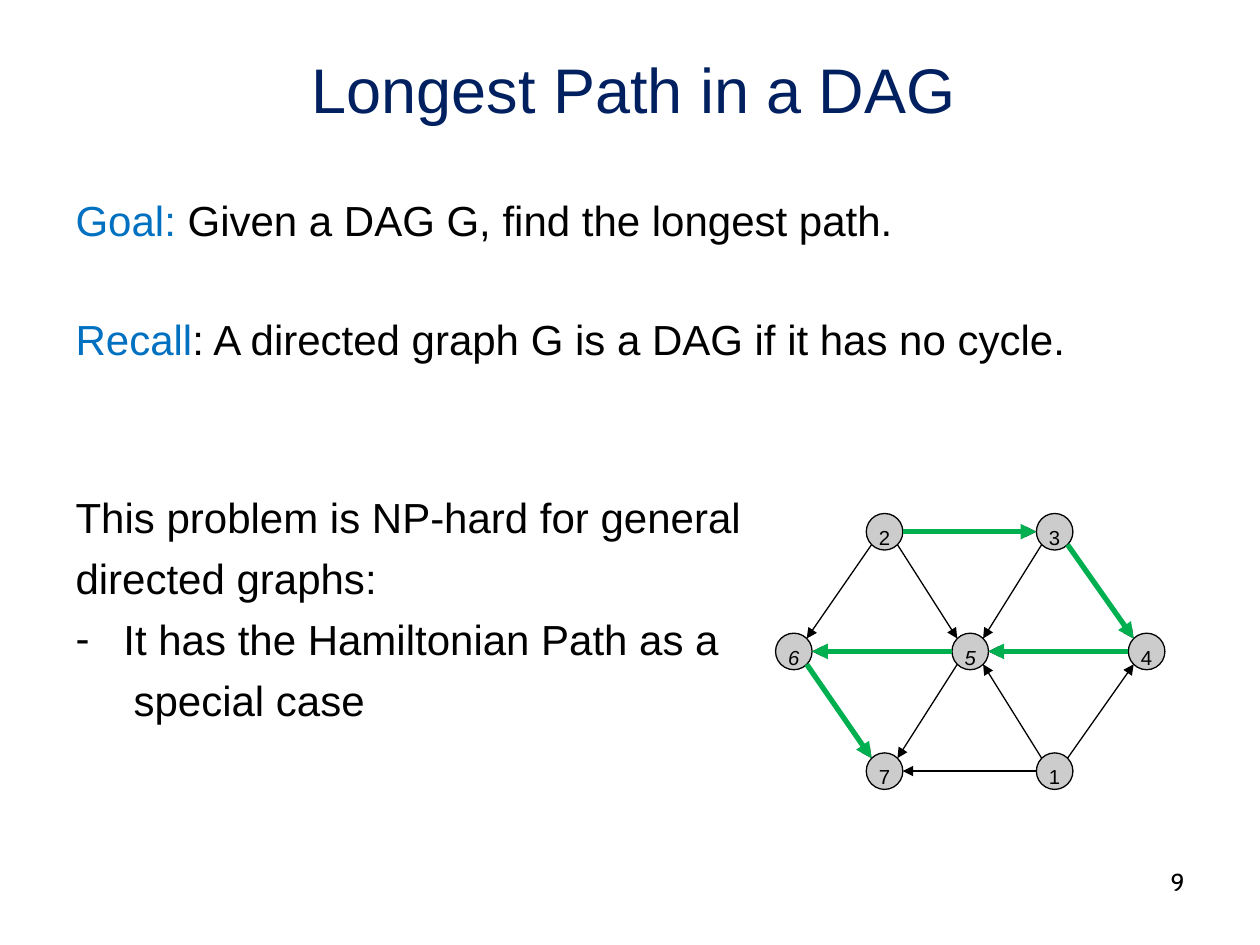
from dataclasses import dataclass
from math import sqrt

from lxml.etree import SubElement
from pptx import Presentation
from pptx.dml.color import RGBColor
from pptx.enum.shapes import MSO_CONNECTOR, MSO_SHAPE
from pptx.enum.text import MSO_ANCHOR, MSO_AUTO_SIZE, PP_ALIGN
from pptx.oxml.ns import qn
from pptx.util import Inches, Pt


@dataclass(frozen=True)
class Theme:
    font: str = "Arial"
    number_font: str = "Cabin"
    title_color: str = "002060"
    accent: str = "0070C0"
    ink: str = "000000"
    node_fill: str = "CCCCCC"
    highlight: str = "00B050"
    title_size: int = 36
    body_size: int = 24
    node_size: int = 20
    number_size: int = 14
    thin: float = 0.75
    thick: float = 3


class SlideBuilder:
    def __init__(self, slide, theme):
        self.slide = slide
        self.theme = theme

    def run(self, p, text, size, color, font=None):
        r = p.add_run()
        r.text = text
        r.font.name = font or self.theme.font
        r.font.size = Pt(size)
        r.font.color.rgb = RGBColor.from_string(color)
        return r

    def place(self, sp, left, top, width, height):
        sp.left, sp.top = Inches(left), Inches(top)
        sp.width, sp.height = Inches(width), Inches(height)

    def frame(self, sp, top_inset):
        tf = sp.text_frame
        tf.word_wrap = True
        tf.auto_size = MSO_AUTO_SIZE.NONE
        tf.vertical_anchor = MSO_ANCHOR.TOP
        tf.margin_top = Inches(top_inset)
        return tf

    def title(self, text, box):
        sp = self.slide.shapes.title
        self.place(sp, *box)
        p = self.frame(sp, 0.1).paragraphs[0]
        p.alignment = PP_ALIGN.CENTER
        self.run(p, text, self.theme.title_size, self.theme.title_color)

    def body(self, paragraphs, box):
        sp = self.slide.placeholders[1]
        self.place(sp, *box)
        tf = self.frame(sp, 0.09)
        for i, (space, margin, bullet, runs) in enumerate(paragraphs):
            p = tf.paragraphs[0] if i == 0 else tf.add_paragraph()
            p.space_before = Pt(space)
            pPr = p._p.get_or_add_pPr()
            pPr.set("marL", str(Inches(margin)))
            pPr.set("indent", str(Inches(-margin if bullet else 0)))
            if bullet:
                SubElement(pPr, qn("a:buChar")).set("char", bullet)
            else:
                SubElement(pPr, qn("a:buNone"))
            for text, color in runs:
                self.run(p, text, self.theme.body_size, color)

    def page_number(self, text, box):
        sp = self.slide.shapes.add_textbox(*map(Inches, box))
        p = self.frame(sp, 0.05).paragraphs[0]
        p.alignment = PP_ALIGN.RIGHT
        self.run(p, text, self.theme.number_size, self.theme.ink, self.theme.number_font)

    def node(self, label, center, size, italic):
        x, y = center
        sp = self.slide.shapes.add_shape(
            MSO_SHAPE.OVAL, Inches(x - size / 2), Inches(y - size / 2), Inches(size), Inches(size))
        sp.shadow.inherit = False
        sp.fill.solid()
        sp.fill.fore_color.rgb = RGBColor.from_string(self.theme.node_fill)
        sp.line.color.rgb = RGBColor.from_string(self.theme.ink)
        sp.line.width = Pt(self.theme.thin)
        tf = sp.text_frame
        tf.word_wrap = False
        tf.vertical_anchor = MSO_ANCHOR.MIDDLE
        tf.margin_left = tf.margin_right = tf.margin_top = 0
        tf.margin_bottom = Inches(0.1)
        p = tf.paragraphs[0]
        p.alignment = PP_ALIGN.CENTER
        r = self.run(p, label, self.theme.node_size, self.theme.ink)
        r.font.italic = italic
        r.font._element.set("baseline", "-25000")

    def arrow(self, start, end, color, width):
        cxn = self.slide.shapes.add_connector(
            MSO_CONNECTOR.STRAIGHT, *map(Inches, (*start, *end)))
        cxn.line.color.rgb = RGBColor.from_string(color)
        cxn.line.width = Pt(width)
        SubElement(cxn.line._get_or_add_ln(), qn("a:tailEnd")).set("type", "triangle")
        SubElement(cxn._element.spPr, qn("a:effectLst"))


def edge_ends(a, b, radius):
    """Ends of an edge on the node rims: at the side if level, else at 45 degrees."""
    dx = 1 if b[0] > a[0] else -1
    dy = (b[1] > a[1]) - (b[1] < a[1])
    reach = radius / sqrt(2) if dy else radius
    return ((a[0] + dx * reach, a[1] + dy * reach),
            (b[0] - dx * reach, b[1] - dy * reach))


def main():
    theme = Theme()
    prs = Presentation()
    prs.slide_width, prs.slide_height = Inches(10), Inches(7.5)
    s = SlideBuilder(prs.slides.add_slide(prs.slide_layouts[1]), theme)

    # Title, text and page number
    s.title("Longest Path in a DAG", (0.28, 0.3, 9.5, 1.25))
    gap, line = 6, 33.5
    s.body([
        # space before, left margin, bullet, runs
        (0, 0, None, [("Goal:", theme.accent),
                      (" Given a DAG G, find the longest path.", theme.ink)]),
        (gap + line, 0, None, [("Recall", theme.accent),
                               (": A directed graph G is a DAG if it has no cycle.", theme.ink)]),
        (gap + 2 * line, 0, None, [("This problem is NP-hard for general", theme.ink)]),
        (gap, 0, None, [("directed graphs:", theme.ink)]),
        (gap, 0.38, "-", [("It has the Hamiltonian Path as a", theme.ink)]),
        (gap, 0.46, None, [("special case", theme.ink)]),
    ], (0.5, 1.45, 9, 5.25))
    s.page_number("9", (7.17, 6.83, 2.33, 0.52))

    # Graph nodes: three rows around the middle node
    mid_x, mid_y, row_gap, outer = 7.7, 5.17, 0.95, 1.4
    left_x, right_x = 7.02, 8.37
    top_y, bottom_y = mid_y - row_gap, mid_y + row_gap
    nodes = {
        "2": (left_x, top_y), "3": (right_x, top_y),
        "6": (mid_x - outer, mid_y), "5": (mid_x, mid_y), "4": (mid_x + outer, mid_y),
        "7": (left_x, bottom_y), "1": (right_x, bottom_y),
    }
    size = 0.29
    for label, center in nodes.items():
        s.node(label, center, size, italic=label in "56")

    # All edges, then the longest path over them
    edges = ["26", "25", "23", "34", "54", "14", "57", "15", "17", "67", "56", "35"]
    edges[edges.index("54")] = "45"
    longest = "234567"
    path_edges = [a + b for a, b in zip(longest, longest[1:])]
    for group, color, width in ((edges, theme.ink, theme.thin),
                                (path_edges, theme.highlight, theme.thick)):
        for a, b in group:
            s.arrow(*edge_ends(nodes[a], nodes[b], size / 2), color, width)

    prs.save("out.pptx")


if __name__ == "__main__":
    main()
